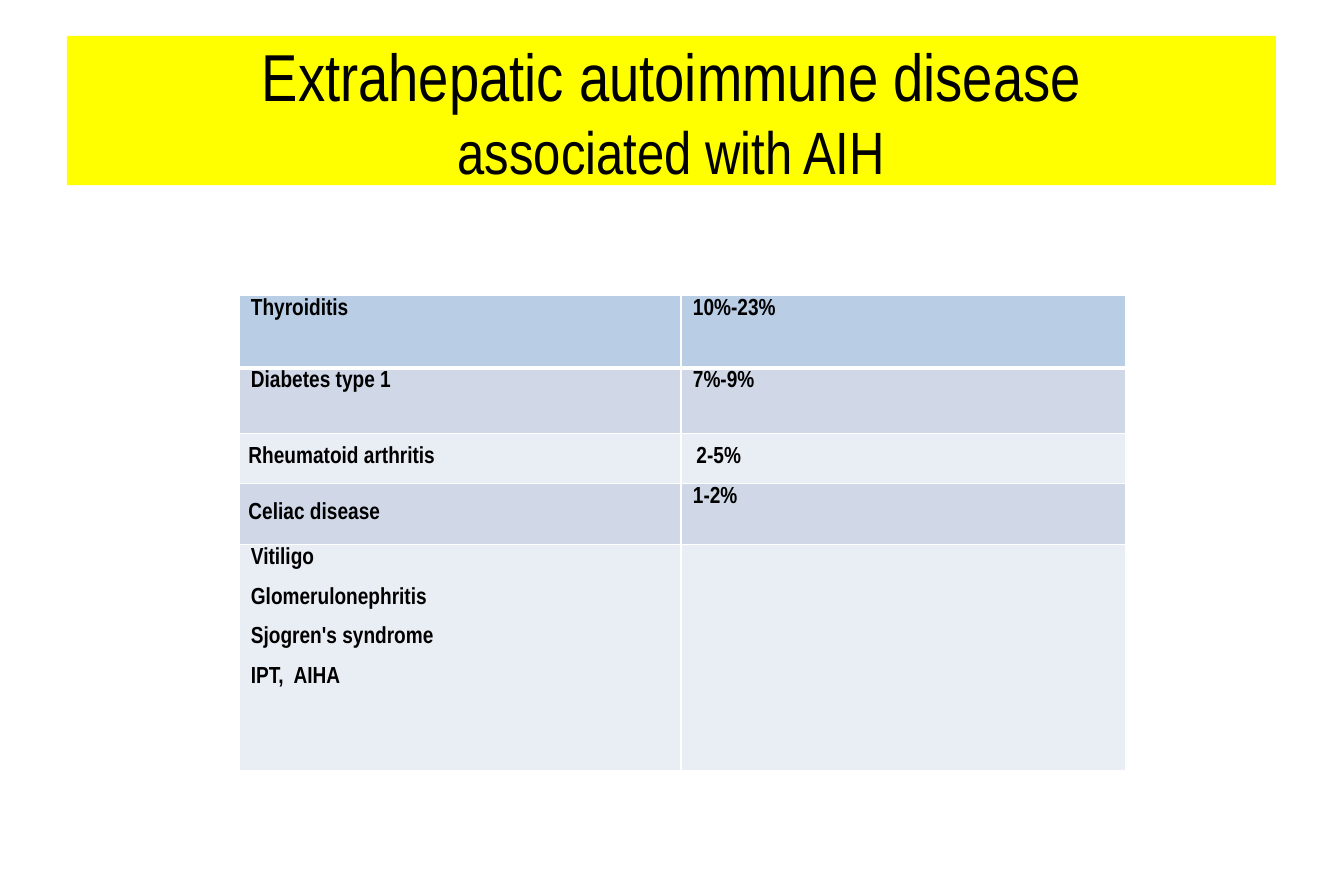
import lxml.etree
import pptx
import pptx.dml.color
import pptx.enum.shapes
import pptx.enum.text
import pptx.oxml.ns
import pptx.util

Inches = pptx.util.Inches
Pt = pptx.util.Pt
RGBColor = pptx.dml.color.RGBColor
Anchor = pptx.enum.text.MSO_ANCHOR

BLACK = RGBColor(0x00, 0x00, 0x00)
WHITE = RGBColor(0xFF, 0xFF, 0xFF)
YELLOW = RGBColor(0xFF, 0xFF, 0x00)
HEADER_BLUE = RGBColor(0xB9, 0xCD, 0xE5)
DARK_BAND = RGBColor(0xD0, 0xD8, 0xE8)
LIGHT_BAND = RGBColor(0xE9, 0xED, 0xF4)

FONT = "Arial Narrow"
COLUMN_WIDTHS = [3.7, 3.72]
ROW_HEIGHTS = [0.61, 0.55, 0.42, 0.51, 1.89]
DISEASES = [
    (["Thyroiditis"], ["10%-23%"]),
    (["Diabetes type 1"], ["7%-9%"]),
    (["Rheumatoid arthritis"], ["2-5%"]),
    (["Celiac disease"], ["1-2%"]),
    (["Vitiligo", "Glomerulonephritis", "Sjogren's syndrome", "IPT,  AIHA"], [""]),
]
CENTERED_INDENTS = {(2, 0): 0.08, (2, 1): 0.13, (3, 0): 0.08}


def add_span(para, text, size, bold=False, color=BLACK):
    span = para.add_run()
    span.text = text
    span.font.name = FONT
    span.font.size = Pt(size)
    span.font.bold = bold
    span.font.color.rgb = color


def add_title(page):
    box = page.shapes.add_shape(
        pptx.enum.shapes.MSO_SHAPE.RECTANGLE,
        Inches(0.56), Inches(0.3), Inches(10.12), Inches(1.25),
    )
    box.shadow.inherit = False
    box.fill.solid()
    box.fill.fore_color.rgb = YELLOW
    box.line.fill.background()
    frame = box.text_frame
    frame.word_wrap = True
    frame.vertical_anchor = Anchor.MIDDLE
    frame.margin_top = frame.margin_bottom = 0
    para = frame.paragraphs[0]
    para.alignment = pptx.enum.text.PP_ALIGN.CENTER
    add_span(para, "Extrahepatic autoimmune disease", size=40)
    para.add_line_break()
    add_span(para, "associated with AIH", size=36)


def add_borders(cell, top, bottom):
    qn = pptx.oxml.ns.qn
    properties = cell._tc.get_or_add_tcPr()
    for side, width in (("L", 1), ("R", 1), ("T", top), ("B", bottom)):
        line = lxml.etree.SubElement(properties, qn(f"a:ln{side}"), w=str(Pt(width)))
        fill = lxml.etree.SubElement(line, qn("a:solidFill"))
        lxml.etree.SubElement(fill, qn("a:srgbClr"), val=str(WHITE))


def fill_cell(cell, lines, color, indent, top, bottom):
    add_borders(cell, top, bottom)
    cell.fill.solid()
    cell.fill.fore_color.rgb = color
    if indent is not None:
        cell.vertical_anchor = Anchor.MIDDLE
        cell.margin_left = Inches(indent)
        cell.margin_top = cell.margin_right = cell.margin_bottom = Inches(0.04)
    frame = cell.text_frame
    for index, text in enumerate(lines):
        para = frame.add_paragraph() if index else frame.paragraphs[0]
        para.line_spacing = 0.8
        para.space_before = Pt(13.2 if index else 0)
        para.font.size = Pt(14)
        if text:
            add_span(para, text, size=14, bold=True)


def add_disease_table(page):
    table = page.shapes.add_table(
        len(DISEASES), len(COLUMN_WIDTHS), Inches(2), Inches(2.47),
        Inches(sum(COLUMN_WIDTHS)), Inches(sum(ROW_HEIGHTS)),
    ).table
    for column, width in zip(table.columns, COLUMN_WIDTHS):
        column.width = Inches(width)
    for row, height in zip(table.rows, ROW_HEIGHTS):
        row.height = Inches(height)
    for row_index, entries in enumerate(DISEASES):
        band = DARK_BAND if row_index % 2 else LIGHT_BAND
        for column_index, lines in enumerate(entries):
            fill_cell(
                table.cell(row_index, column_index), lines,
                color=band if row_index else HEADER_BLUE,
                indent=CENTERED_INDENTS.get((row_index, column_index)),
                top=3 if row_index == 1 else 1,
                bottom=3 if row_index == 0 else 1,
            )


def main():
    deck = pptx.Presentation()
    deck.slide_width = Inches(11.25)
    deck.slide_height = Inches(7.5)
    page = deck.slides.add_slide(deck.slide_layouts[6])
    add_title(page)
    add_disease_table(page)
    deck.save("out.pptx")


if __name__ == "__main__":
    main()
